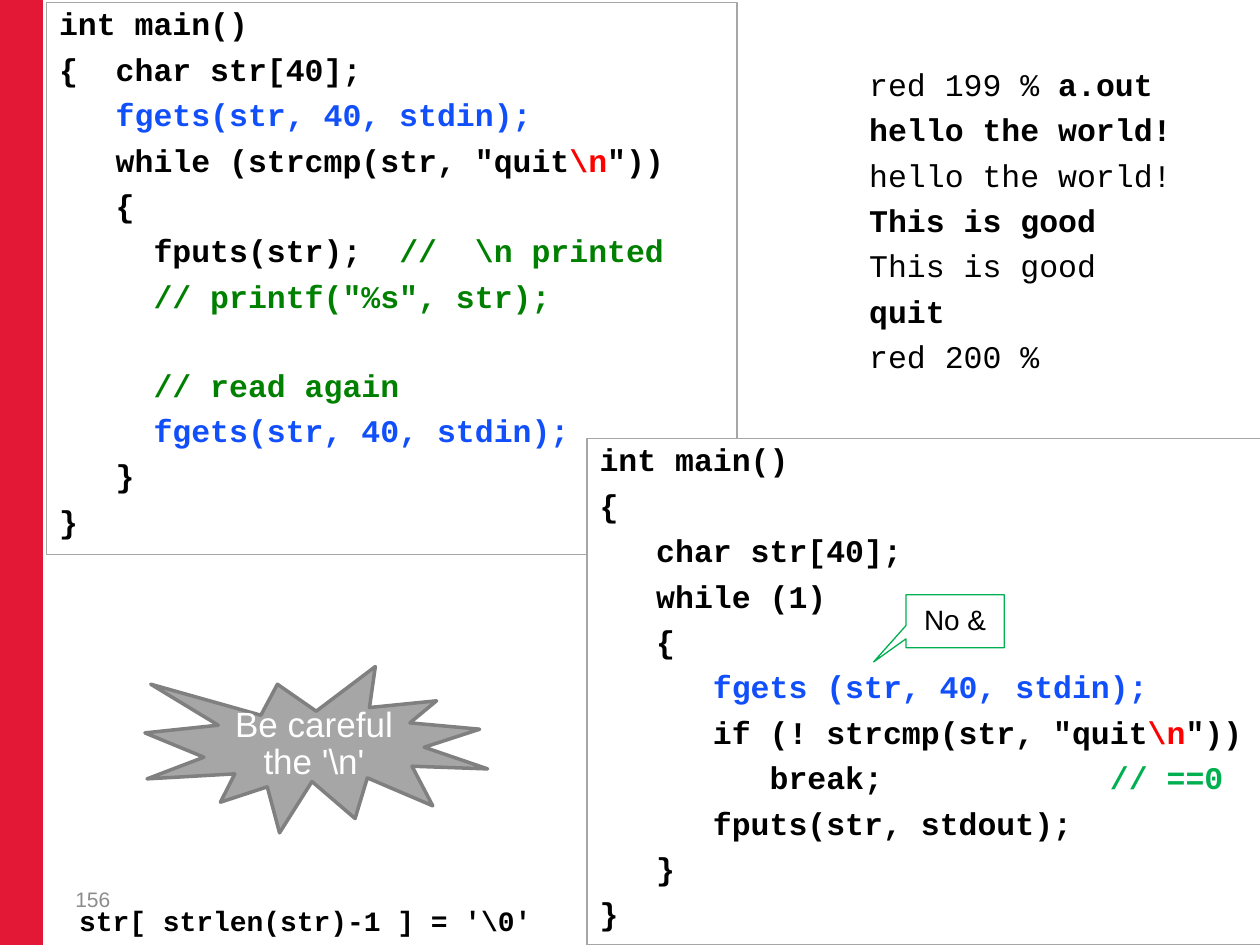
from pptx import Presentation
from pptx.dml.color import RGBColor
from pptx.enum import shapes, text
from pptx.util import Inches, Pt

BLACK, BLUE, RED, GREEN = "000000", "114FFB", "FF0000", "008000"
LIME, GREY, WHITE = "00B050", "A6A6A6", "FFFFFF"
CODE, SANS = "Courier New", "Arial"
SHAPE = shapes.MSO_SHAPE


def add_block(kind, box, fill=None, line=None, width=0.75):
    """Add a preset shape, or a plain text box when kind is None."""
    box = [Inches(v) for v in box]
    if kind is None:
        sp = s.shapes.add_textbox(*box)
    else:
        sp = s.shapes.add_shape(kind, *box)
        sp.shadow.inherit = False
    if fill:
        sp.fill.solid()
        sp.fill.fore_color.rgb = RGBColor.from_string(fill)
    else:
        sp.fill.background()
    if line:
        sp.line.color.rgb = RGBColor.from_string(line)
        sp.line.width = Pt(width)
    else:
        sp.line.fill.background()
    return sp


def write(sp, lines, size=18, font=CODE, color=BLACK, bold=False,
          align=text.PP_ALIGN.LEFT, anchor=text.MSO_ANCHOR.TOP):
    """Each line is a list of runs: a string, or (string, colour, bold)."""
    tf = sp.text_frame
    tf.word_wrap = True
    tf.vertical_anchor = anchor
    for i, line in enumerate(lines):
        p = tf.add_paragraph() if i else tf.paragraphs[0]
        p.alignment = align
        p.line_spacing = 0.9
        p.space_before = Pt(0.36 * size)
        for part in line:
            string, run_color, run_bold = (part, color, bold) if isinstance(part, str) else part
            r = p.add_run()
            r.text = string
            r.font.size = Pt(size)
            r.font.name = font
            r.font.bold = run_bold
            r.font.color.rgb = RGBColor.from_string(run_color)


prs = Presentation()
prs.slide_width, prs.slide_height = Inches(10), Inches(7.5)
s = prs.slides.add_slide(prs.slide_layouts[6])
MIDDLE, CENTER = text.MSO_ANCHOR.MIDDLE, text.PP_ALIGN.CENTER

# Side band and page number
add_block(SHAPE.RECTANGLE, (0, 0, 0.34, 7.5), "E31837")
number = add_block(None, (0.5, 6.94, 0.5, 0.42))
write(number, [["156"]], 12, SANS, "8C8C8C", anchor=MIDDLE)

# First program: read before the loop and again inside it
first = add_block(SHAPE.RECTANGLE, (0.37, 0.02, 5.48, 4.38), line=GREY)
write(first, [
    ["int main()"],
    ["{  char str[40];"],
    ["   ", ("fgets(str, 40, stdin);", BLUE, True)],
    ["   while (strcmp(str, \"quit", ("\\n", RED, True), "\"))"],
    ["   {"],
    ["     fputs(str);  ", ("//  \\n printed", GREEN, True)],
    ["     ", ("// printf(\"%s\", str);", GREEN, True)],
    ["     ", ("// read again", GREEN, True)],
    ["     ", ("fgets(str, 40, stdin);", BLUE, True)],
    ["   }"],
    ["}"],
], bold=True)
# One extra line of space above the "read again" comment
first.text_frame.paragraphs[7].space_before = Pt(31.3)

# Second program: endless loop with a break
second = add_block(SHAPE.RECTANGLE, (4.66, 3.48, 5.48, 4.02), WHITE, GREY)
write(second, [
    ["int main()"],
    ["{"],
    ["   char str[40];"],
    ["   while (1)"],
    ["   {"],
    ["      ", ("fgets (str, 40, stdin);", BLUE, True)],
    ["      if (! strcmp(str, \"quit", ("\\n", RED, True), "\"))"],
    ["         break;            ", ("// ==0", LIME, True)],
    ["      fputs(str, stdout);"],
    ["   }"],
    ["}"],
], bold=True)

# Terminal session, typed input in bold
session = add_block(None, (6.8, 0.5, 2.97, 2.56))
write(session, [["red 199 % ", ("a.out", BLACK, True)]] + [
    [(string, BLACK, typed)] for string, typed in (
        ("hello the world!", True), ("hello the world!", False),
        ("This is good", True), ("This is good", False),
        ("quit", True), ("red 200 %", False))
])

# Remarks
burst = add_block(SHAPE.EXPLOSION1, (1.15, 5.29, 2.72, 1.32), GREY, "808080", 2)
write(burst, [["Be careful the '\\n'"]], 20, SANS, WHITE, align=CENTER, anchor=MIDDLE)

callout = add_block(SHAPE.RECTANGULAR_CALLOUT, (7.19, 4.72, 0.78, 0.42), line=LIME)
callout.adjustments[0], callout.adjustments[1] = -0.83, 0.77
write(callout, [["No &"]], 16, SANS, align=CENTER, anchor=MIDDLE)

tip = add_block(None, (0.53, 7.15, 5.15, 0.67))
write(tip, [["str[ strlen(str)-1 ] = '\\0'"]], 16, bold=True)

prs.save("out.pptx")
